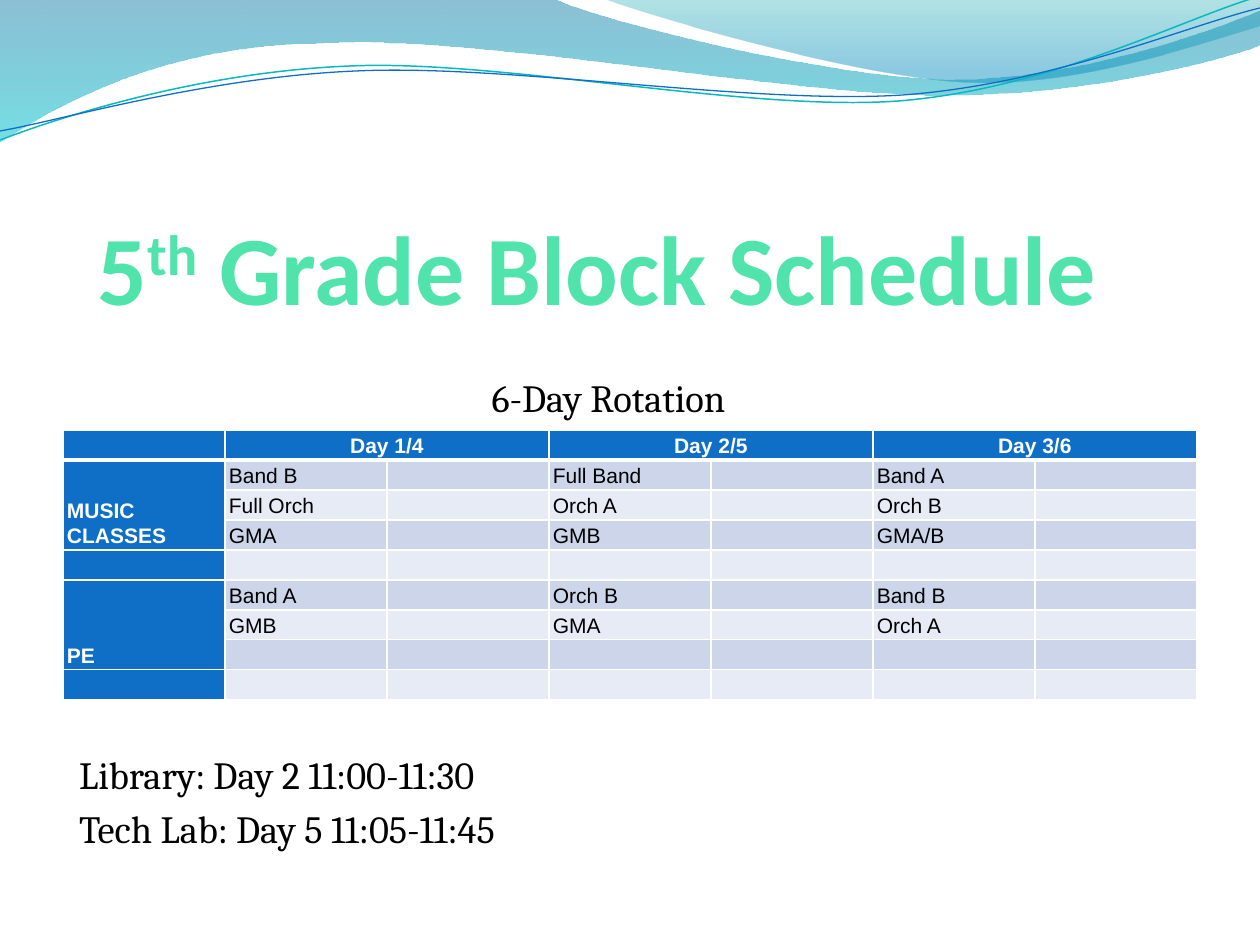
from pptx import Presentation
from pptx.dml.color import RGBColor
from pptx.enum.text import MSO_ANCHOR as Anchor, MSO_AUTO_SIZE as AutoSize, PP_ALIGN as Align
from pptx.oxml.xmlchemy import OxmlElement
from pptx.util import Emu, Pt

PX = 914400 / 126
COLORS = {"blue": "0F6FC6", "teal": "0AB8BF", "mint": "50E3AC", "black": "000000",
          "white": "FFFFFF", "dark band": "CCD5EA", "light band": "E7EBF5",
          "deep blue": "0074A1", "aqua": "00C6CF", "sea": "00A1A9", "sky": "008BBF"}

# Waves: a start point, then segments of one point (line) or three (Bezier curve)
LEFT_WAVE = [(0, -1), [(554, -1)],
             [(600, 21), (837, 79), (955, 79)], [(1075, 79), (1207, 33), (1260, 11)],
             [(1261, 45)],
             [(1239, 55), (1096, 96), (940, 95)], [(784, 95), (481, 35), (324, 43)],
             [(163, 44), (58, 105), (-1, 142)]]
RIGHT_WAVE = [(604, -1),
              [(641, 14), (859, 78), (969, 82)], [(1079, 87), (1211, 40), (1260, 26)],
              [(1260, 0)]]
TEAL_LINE = [(0, 140),
             [(60, 117), (199, 72), (349, 66)], [(498, 59), (747, 112), (898, 101)],
             [(1050, 89), (1182, 19), (1257, -3)]]
BLUE_LINE = [(0, 131),
             [(59, 121), (207, 77), (357, 71)], [(508, 64), (752, 105), (903, 95)],
             [(1053, 84), (1186, 26), (1260, 8)]]

DAYS = ["Day 1/4", "Day 2/5", "Day 3/6"]
BLOCKS = [("MUSIC CLASSES", [["Band B", "Full Band", "Band A"],
                             ["Full Orch", "Orch A", "Orch B"],
                             ["GMA", "GMB", "GMA/B"]]),
          ("PE", [["Band A", "Orch B", "Band B"],
                  ["GMB", "GMA", "Orch A"]])]


def px(value):
    return Emu(round(value * PX))


def rgb(name):
    return RGBColor.from_string(COLORS[name])


def set_font(font, name, size, color, bold=False):
    font.name, font.size, font.bold = name, Pt(size), bold
    font.color.rgb = rgb(color)


def place(shape, box):
    shape.left, shape.top, shape.width, shape.height = map(px, box)


def set_insets(frame, inset):
    frame.margin_left = frame.margin_right = px(inset)
    frame.margin_top = frame.margin_bottom = px(inset)


def bend(wave, segments):
    """Join the three lines of each curved segment into one Bezier curve."""
    lines = iter(wave._element.spPr.xpath(".//a:lnTo"))
    for segment in segments:
        group = [next(lines) for _ in segment]
        if len(group) == 1:
            continue
        curve = OxmlElement("a:cubicBezTo")
        group[0].addprevious(curve)
        for line in group:
            curve.append(line[0])
            line.getparent().remove(line)


def add_wave(page, outline, closed):
    start, *segments = outline
    points = [tuple(map(px, point)) for segment in segments for point in segment]
    builder = page.shapes.build_freeform(*map(px, start), scale=1.0)
    builder.add_line_segments(points, close=closed)
    wave = builder.convert_to_shape()
    bend(wave, segments)
    wave.shadow.inherit = False
    return wave


def add_gradient_wave(page, outline, stops):
    wave = add_wave(page, outline, True)
    wave.line.fill.background()
    wave.fill.gradient()
    wave.fill.gradient_angle = 270
    for stop, (position, color, _) in zip(wave.fill.gradient_stops, stops):
        stop.position = position
        stop.color.rgb = rgb(color)
    for node, (_, _, opacity) in zip(wave._element.spPr.xpath(".//a:gs/a:srgbClr"), stops):
        alpha = OxmlElement("a:alpha")
        alpha.set("val", str(opacity * 1000))
        node.append(alpha)


def add_line_wave(page, outline, color, width):
    wave = add_wave(page, outline, False)
    wave.fill.background()
    wave.line.color.rgb = rgb(color)
    wave.line.width = Pt(width)


def add_header(page):
    add_gradient_wave(page, LEFT_WAVE, [(0, "deep blue", 45), (1, "aqua", 55)])
    add_gradient_wave(page, RIGHT_WAVE, [(0, "sea", 30), (0.8, "sky", 45)])
    add_line_wave(page, TEAL_LINE, "teal", 0.85)
    add_line_wave(page, BLUE_LINE, "blue", 0.75)


def fill_title(title, box):
    place(title, box)
    frame = title.text_frame
    set_insets(frame, 0)
    frame.vertical_anchor = Anchor.BOTTOM
    frame.auto_size = AutoSize.NONE
    para = frame.paragraphs[0]
    para.alignment = Align.CENTER
    set_font(para.font, "Calibri", 56, "mint", True)
    for text in ("5", "th", " Grade Block Schedule "):
        span = para.add_run()
        span.text = text
        if text == "th":
            span._r.get_or_add_rPr().set("baseline", "30000")


def fill_body(body, box):
    place(body, box)
    frame = body.text_frame
    set_insets(frame, 6)
    frame.vertical_anchor = Anchor.TOP
    frame.auto_size = AutoSize.NONE
    # The second line starts below the table
    lines = [("6-Day Rotation", Align.CENTER, 4.4),
             ("Library: Day 2 11:00-11:30", Align.LEFT, 189),
             ("Tech Lab: Day 5 11:05-11:45", Align.LEFT, 4.4)]
    frame.text = "\n".join(text for text, _, _ in lines)
    for para, (_, alignment, gap) in zip(frame.paragraphs, lines):
        para.alignment = alignment
        para.space_before = Pt(gap)
        set_font(para.font, "Cambria", 22, "black")
        properties = para._p.get_or_add_pPr()
        properties.set("marL", "0")
        properties.set("indent", "0")
        properties.insert_element_before(OxmlElement("a:buNone"), "a:tabLst", "a:defRPr")


def add_borders(cell, widths):
    properties = cell._tc.get_or_add_tcPr()
    for index, (side, width) in enumerate(widths.items()):
        border = OxmlElement(f"a:ln{side}")
        border.set("w", str(Pt(width)))
        fill = OxmlElement("a:solidFill")
        color = OxmlElement("a:srgbClr")
        color.set("val", COLORS["white"])
        fill.append(color)
        border.append(fill)
        properties.insert(index, border)


def style_cell(cell, row, column):
    heading = row == 0 or column == 0
    band = "dark band" if row % 2 else "light band"
    cell.fill.solid()
    cell.fill.fore_color.rgb = rgb("blue" if heading else band)
    add_borders(cell, {"L": 1, "R": 1, "T": 3 if row == 1 else 1, "B": 1 if row else 3})
    cell.margin_left = cell.margin_right = px(4)
    cell.margin_top = cell.margin_bottom = px(2)
    cell.vertical_anchor = Anchor.BOTTOM
    para = cell.text_frame.paragraphs[0]
    para.alignment = Align.CENTER if row == 0 else Align.LEFT
    para.line_spacing = 1.07
    set_font(para.font, "Arial", 12, "white" if heading else "black", heading)
    if not cell.text:
        para._p.get_or_add_endParaRPr().set("sz", "1200")


def add_schedule(page, box):
    rows, columns = 9, 7
    table = page.shapes.add_table(rows, columns, *map(px, box)).table
    for column in table.columns:
        column.width = px(box[2] / columns)
    for row in table.rows:
        row.height = px(box[3] / rows)
    # Each day spans two columns, each block three rows and a spacer row
    for index, day in enumerate(DAYS):
        left = 1 + 2 * index
        table.cell(0, left).text = day
        table.cell(0, left).merge(table.cell(0, left + 1))
    for index, (name, lessons) in enumerate(BLOCKS):
        top = 1 + 4 * index
        table.cell(top, 0).text = name
        table.cell(top, 0).merge(table.cell(top + 2, 0))
        for row, groups in enumerate(lessons, top):
            for day, group in enumerate(groups):
                table.cell(row, 1 + 2 * day).text = group
    for row in range(rows):
        for column in range(columns):
            style_cell(table.cell(row, column), row, column)


def main():
    deck = Presentation()
    deck.slide_width, deck.slide_height = px(1260), px(945)
    page = deck.slides.add_slide(deck.slide_layouts[1])
    add_header(page)
    fill_title(page.shapes.title, (73, 147, 1071, 178))
    fill_body(page.placeholders[1], (73, 368, 1071, 213))
    add_schedule(page, (63, 430, 1134, 270))
    deck.save("out.pptx")


if __name__ == "__main__":
    main()
